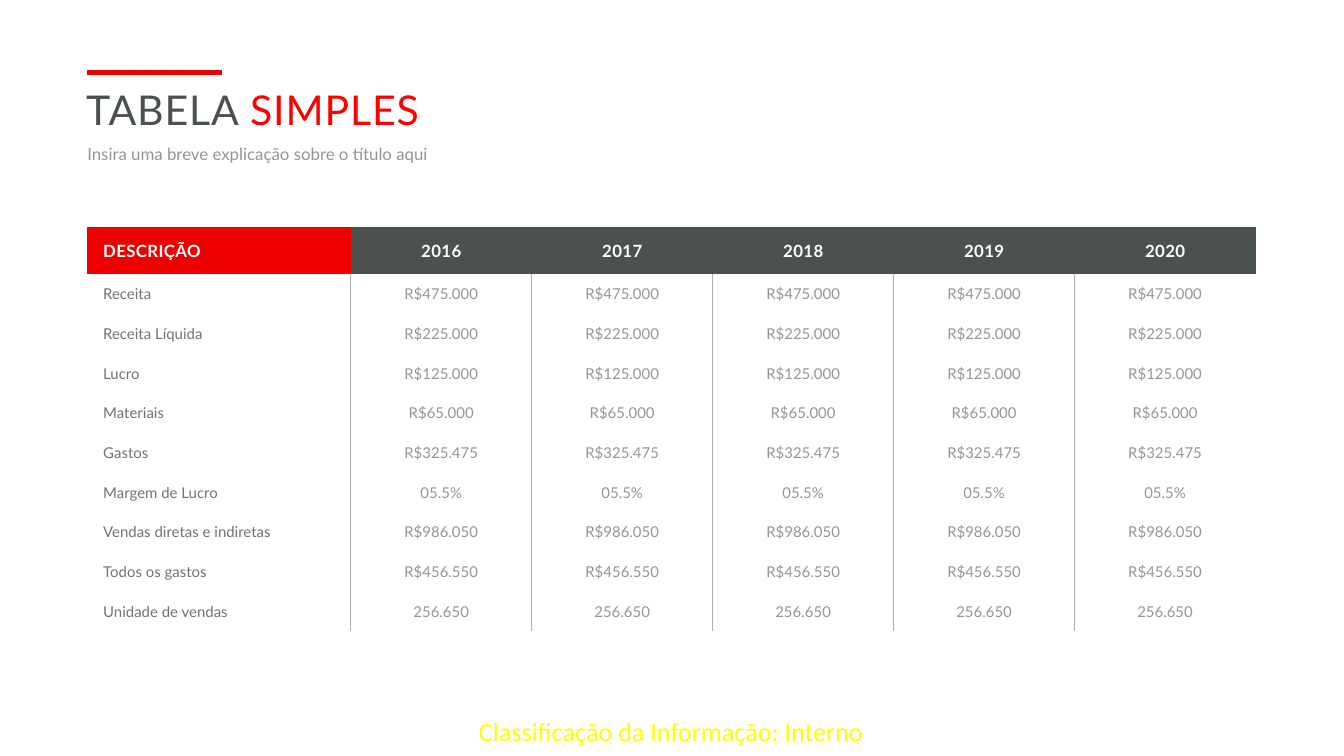
from lxml import etree
from pptx import Presentation
from pptx.dml.color import RGBColor
from pptx.enum.shapes import MSO_CONNECTOR
from pptx.enum.text import MSO_ANCHOR, MSO_AUTO_SIZE, PP_ALIGN
from pptx.oxml.ns import qn
from pptx.util import Cm, Pt

STRAIGHT = MSO_CONNECTOR.STRAIGHT
TOP, MIDDLE = MSO_ANCHOR.TOP, MSO_ANCHOR.MIDDLE
LEFT, CENTER = PP_ALIGN.LEFT, PP_ALIGN.CENTER
NO_FIT = MSO_AUTO_SIZE.NONE
PLAIN_TABLE_STYLE = "{2D5ABB26-0587-4C30-8999-92F81FD0307C}"

COLORS = {
    "red": "EC0000",
    "bright_red": "FF0000",
    "dark": "4B5050",
    "label": "6E7378",
    "gray": "91969B",
    "rule": "AAAFB4",
    "white": "FFFFFF",
    "yellow": "FFFF00",
}

YEARS = ["2016", "2017", "2018", "2019", "2020"]
ROWS = [
    ("Receita", "R$475.000"),
    ("Receita Líquida", "R$225.000"),
    ("Lucro", "R$125.000"),
    ("Materiais", "R$65.000"),
    ("Gastos", "R$325.475"),
    ("Margem de Lucro", "05.5%"),
    ("Vendas diretas e indiretas", "R$986.050"),
    ("Todos os gastos", "R$456.550"),
    ("Unidade de vendas", "256.650"),
]


def add_span(para, text, size, color, font="Lato", bold=False, spacing=0):
    span = para.add_run()
    span.text = text
    span.font.name = font
    span.font.size = Pt(size)
    span.font.bold = bold
    span.font.color.rgb = RGBColor.from_string(COLORS[color])
    if spacing:
        span.font._element.set("spc", str(spacing))


def set_frame(box, left, top, width, height, anchor, align):
    box.left, box.top, box.width, box.height = Cm(left), Cm(top), Cm(width), Cm(height)
    frame = box.text_frame
    frame.margin_left = frame.margin_right = frame.margin_top = frame.margin_bottom = 0
    frame.word_wrap = True
    frame.auto_size = NO_FIT
    frame.vertical_anchor = anchor
    para = frame.paragraphs[0]
    para.alignment = align
    para.space_before = Pt(0)
    return para


deck = Presentation()
deck.slide_width, deck.slide_height = Cm(25.4), Cm(14.29)
page = deck.slides.add_slide(deck.slide_layouts[2])

accent = page.shapes.add_connector(STRAIGHT, Cm(1.65), Cm(1.37), Cm(4.19), Cm(1.37))
accent.line.color.rgb = RGBColor.from_string(COLORS["red"])
accent.line.width = Pt(2.25)
etree.SubElement(accent._element.spPr, qn("a:effectLst"))

title = set_frame(page.shapes.title, 1.63, 1.6, 22.1, 1.07, TOP, LEFT)
add_span(title, "TABELA ", 22, "dark", spacing=50)
add_span(title, "SIMPLES", 22, "bright_red", spacing=50)

subtitle = set_frame(page.placeholders[1], 1.65, 2.67, 22.1, 0.38, TOP, LEFT)
subtitle.line_spacing = Pt(12)
add_span(subtitle, "Insira uma breve explicação sobre o título aqui", 9, "gray")

footer_box = page.shapes.add_textbox(0, 0, 0, 0)
footer = set_frame(footer_box, 8.48, 13.36, 8.41, 0.91, MIDDLE, CENTER)
add_span(footer, "Classificação da Informação: Interno", 14, "yellow", font="Calibri")

table = page.shapes.add_table(
    len(ROWS) + 1, len(YEARS) + 1, Cm(1.65), Cm(4.29), Cm(22.08), Cm(7.64)
).table
table.horz_banding = False
table._tbl.tblPr.find(qn("a:tableStyleId")).text = PLAIN_TABLE_STYLE
for index, column in enumerate(table.columns):
    column.width = Cm(4.98 if index == 0 else 3.42)
for index, row in enumerate(table.rows):
    row.height = Cm(0.89 if index == 0 else 0.75)

grid = [["DESCRIÇÃO"] + YEARS]
grid += [[label] + [value] * len(YEARS) for label, value in ROWS]

for row_index, texts in enumerate(grid):
    for column_index, text in enumerate(texts):
        is_header, is_label = row_index == 0, column_index == 0
        cell = table.cell(row_index, column_index)
        cell.vertical_anchor = MIDDLE
        cell.margin_left = Cm(0.3 if is_label else 0.1)
        cell.margin_right = Cm(0.1)
        cell.margin_top = cell.margin_bottom = Cm(0.05)
        para = cell.text_frame.paragraphs[0]
        para.alignment = LEFT if is_label else CENTER
        if is_header:
            add_span(para, text, 9, "white", bold=True, spacing=20)
            cell.fill.solid()
            cell.fill.fore_color.rgb = RGBColor.from_string(
                COLORS["red" if is_label else "dark"]
            )
            continue
        add_span(para, text, 8, "label" if is_label else "gray")
        cell.fill.background()
        sides = []
        if column_index > 0:
            sides.append("a:lnL")
        if column_index < len(YEARS):
            sides.append("a:lnR")
        for position, side in enumerate(sides):
            border = etree.Element(qn(side), w=str(Pt(0.5)))
            fill = etree.SubElement(border, qn("a:solidFill"))
            etree.SubElement(fill, qn("a:srgbClr"), val=COLORS["rule"])
            cell._tc.tcPr.insert(position, border)

deck.save("out.pptx")
